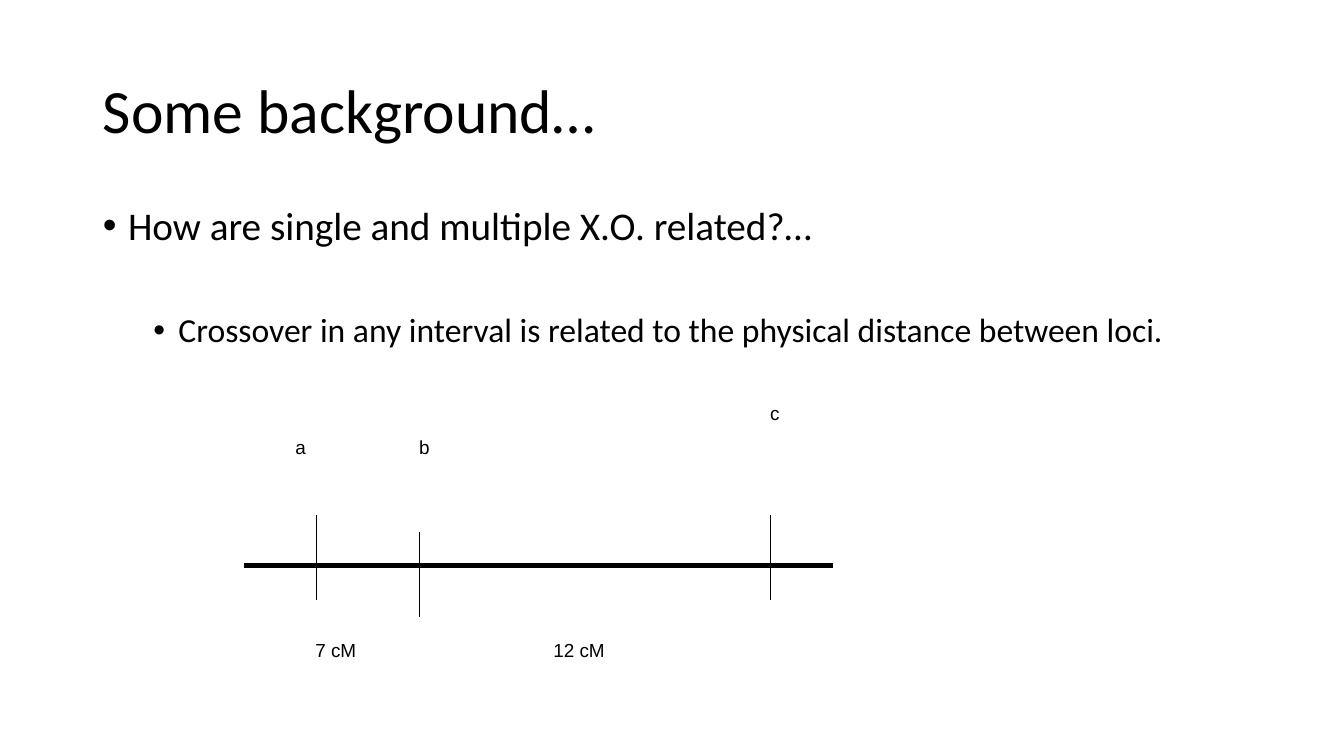
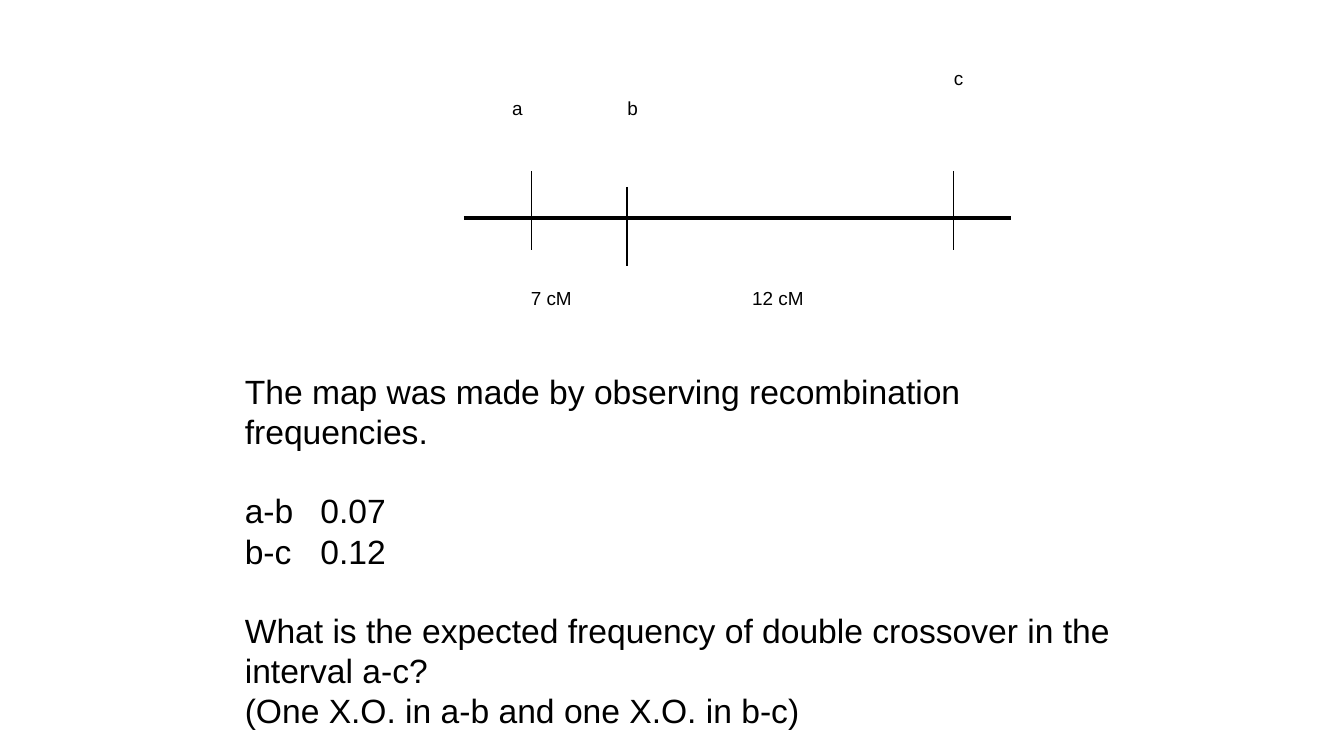
from dataclasses import dataclass

from lxml import etree
from pptx import Presentation
from pptx.dml.color import RGBColor
from pptx.enum.shapes import MSO_CONNECTOR
from pptx.enum.text import MSO_ANCHOR, MSO_AUTO_SIZE, PP_ALIGN
from pptx.oxml.ns import qn
from pptx.util import Inches, Pt

STRAIGHT = MSO_CONNECTOR.STRAIGHT
TOP, MIDDLE = MSO_ANCHOR.TOP, MSO_ANCHOR.MIDDLE
LEFT = PP_ALIGN.LEFT
NO_AUTOFIT = MSO_AUTO_SIZE.NONE
TITLE_LAYOUT, BLANK_LAYOUT = 1, 6


@dataclass(frozen=True)
class Theme:
    ink: RGBColor = RGBColor(0, 0, 0)
    heading_font: str = "Calibri"
    text_font: str = "Arial"
    title_size: float = 44
    bullet_sizes: tuple = (28, 24)
    text_size: float = 24
    label_size: float = 13.5
    axis_width: float = 3
    tick_width: float = 1
    line_spacing: float = 0.9


THEME = Theme()

AXIS_LENGTH = 5.84
TICK_LENGTH = 0.84
TICKS = [(0.72, -0.5), (1.74, -0.33), (5.22, -0.5)]
LABELS = [
    ("a", 0.41, -1.34, 0.82),
    ("b", 1.64, -1.34, 1.23),
    ("c", 5.12, -1.67, 1.13),
    ("7 cM", 0.61, 0.68, 1.02),
    ("12 cM", 2.97, 0.68, 2.05),
]
LABEL_HEIGHT = 0.33

BULLETS = [
    ("How are single and multiple X.O. related?…", 0, 10),
    ("Crossover in any interval is related to the physical distance between loci.", 1, 46),
]
QUESTION = [
    ("The map was made by observing recombination frequencies.", 0),
    ("a-b\t0.07", 27.6),
    ("b-c\t0.12", 0),
    ("What is the expected frequency of double crossover in the interval a-c?", 27.6),
    ("(One X.O. in a-b and one X.O. in b-c)", 0),
]


def add_run(paragraph, text, font_name, size):
    run = paragraph.add_run()
    run.text = text
    run.font.name = font_name
    run.font.size = Pt(size)
    run.font.color.rgb = THEME.ink


def place(shape, left, top, width, height):
    shape.left, shape.top = Inches(left), Inches(top)
    shape.width, shape.height = Inches(width), Inches(height)


def prepare_frame(shape, anchor=TOP):
    frame = shape.text_frame
    frame.word_wrap = True
    frame.auto_size = NO_AUTOFIT
    frame.vertical_anchor = anchor
    return frame


def paragraphs_for(frame, items):
    for index, item in enumerate(items):
        paragraph = frame.add_paragraph() if index else frame.paragraphs[0]
        paragraph.alignment = LEFT
        yield paragraph, item


def set_bullet(paragraph, level):
    paragraph.level = level
    properties = paragraph._p.get_or_add_pPr()
    properties.set("marL", str(Inches(0.25 + 0.5 * level)))
    properties.set("indent", str(Inches(-0.25)))
    etree.SubElement(properties, qn("a:buFont")).set("typeface", THEME.text_font)
    etree.SubElement(properties, qn("a:buChar")).set("char", "•")


def set_tab_stop(paragraph, position):
    tabs = etree.SubElement(paragraph._p.get_or_add_pPr(), qn("a:tabLst"))
    stop = etree.SubElement(tabs, qn("a:tab"))
    stop.set("pos", str(Inches(position)))
    stop.set("algn", "l")


def fill_title(slide, text):
    title = slide.shapes.title
    place(title, 0.92, 0.4, 11.5, 1.45)
    paragraph = prepare_frame(title, MIDDLE).paragraphs[0]
    paragraph.alignment = LEFT
    paragraph.line_spacing = THEME.line_spacing
    add_run(paragraph, text, THEME.heading_font, THEME.title_size)


def fill_bullets(slide, bullets):
    body = slide.placeholders[1]
    place(body, 0.92, 2, 11.5, 4.76)
    for paragraph, (text, level, space) in paragraphs_for(prepare_frame(body), bullets):
        paragraph.line_spacing = THEME.line_spacing
        paragraph.space_before = Pt(space)
        set_bullet(paragraph, level)
        add_run(paragraph, text, THEME.heading_font, THEME.bullet_sizes[level])


def add_text(shapes, box, items, size, tab=None):
    textbox = shapes.add_textbox(*map(Inches, box))
    for paragraph, (text, space) in paragraphs_for(prepare_frame(textbox), items):
        paragraph.space_before = Pt(space)
        if "\t" in text:
            set_tab_stop(paragraph, tab)
        add_run(paragraph, text, THEME.text_font, size)


def add_line(shapes, ends, width):
    line = shapes.add_connector(STRAIGHT, *map(Inches, ends))
    line.line.color.rgb = THEME.ink
    line.line.width = Pt(width)
    etree.SubElement(line._element.spPr, qn("a:effectLst"))


def add_gene_map(slide, left, axis, scale=1):
    shapes = slide.shapes.add_group_shape().shapes
    add_line(shapes, (left, axis, left + AXIS_LENGTH * scale, axis), THEME.axis_width)
    for offset, rise in TICKS:
        x = left + offset * scale
        ends = (x, axis + rise * scale, x, axis + (rise + TICK_LENGTH) * scale)
        add_line(shapes, ends, THEME.tick_width)
    for text, offset, rise, width in LABELS:
        box = (left + offset * scale, axis + rise * scale, width * scale, LABEL_HEIGHT)
        add_text(shapes, box, [(text, 0)], THEME.label_size)


def build_background_slide(presentation):
    slide = presentation.slides.add_slide(presentation.slide_layouts[TITLE_LAYOUT])
    fill_title(slide, "Some background…")
    fill_bullets(slide, BULLETS)
    add_gene_map(slide, 2.42, 5.61)


def build_question_slide(presentation):
    slide = presentation.slides.add_slide(presentation.slide_layouts[BLANK_LAYOUT])
    add_gene_map(slide, 4.6, 2.16, 0.93)
    add_text(slide.shapes, (2.33, 3.63, 8.83, 3.74), QUESTION, THEME.text_size, tab=0.75)


def main():
    presentation = Presentation()
    presentation.slide_width = Inches(13.33)
    presentation.slide_height = Inches(7.5)
    build_background_slide(presentation)
    build_question_slide(presentation)
    presentation.save("out.pptx")


if __name__ == "__main__":
    main()
